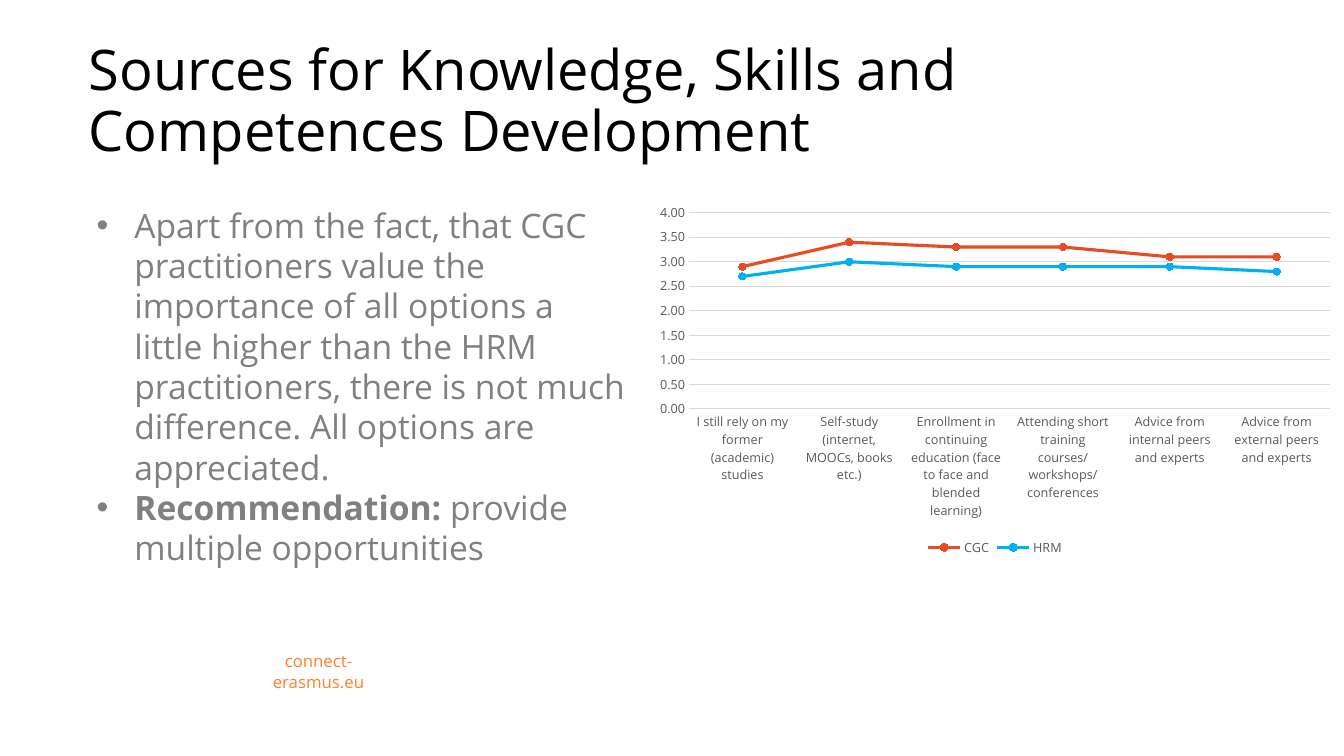
from lxml import etree
from pptx import Presentation
from pptx.chart.data import CategoryChartData
from pptx.dml.color import RGBColor
from pptx.enum.chart import XL_CHART_TYPE, XL_LEGEND_POSITION, XL_MARKER_STYLE, XL_TICK_MARK
from pptx.enum.text import MSO_ANCHOR, PP_ALIGN
from pptx.oxml.ns import qn
from pptx.util import Pt

LINE_CHART = XL_CHART_TYPE.LINE_MARKERS
LEGEND_BOTTOM = XL_LEGEND_POSITION.BOTTOM
CIRCLE = XL_MARKER_STYLE.CIRCLE
NO_TICK = XL_TICK_MARK.NONE
TOP, MIDDLE, BOTTOM = MSO_ANCHOR.TOP, MSO_ANCHOR.MIDDLE, MSO_ANCHOR.BOTTOM
LEFT, CENTER = PP_ALIGN.LEFT, PP_ALIGN.CENTER

BLACK = RGBColor(0x00, 0x00, 0x00)
GRAY = RGBColor(0x80, 0x80, 0x80)
DARK_GRAY = RGBColor(0x59, 0x59, 0x59)
GRID_GRAY = RGBColor(0xD9, 0xD9, 0xD9)
ORANGE = RGBColor(0xFF, 0x7F, 0x2A)
RED = RGBColor(0xE8, 0x4C, 0x22)
BLUE = RGBColor(0x00, 0xB0, 0xF0)

FINDINGS = [
    [("Apart from the fact, that CGC practitioners value the importance of all options "
      "a little higher than the HRM practitioners, there is not much difference. "
      "All options are appreciated.", False)],
    [("Recommendation: ", True), ("provide multiple opportunities", False)],
]
SOURCES = [
    "I still rely on my former (academic) studies",
    "Self-study (internet, MOOCs, books etc.)",
    "Enrollment in continuing education (face to face and blended learning)",
    "Attending short training courses/workshops/conferences",
    "Advice from internal peers and experts",
    "Advice from external peers and experts",
]
RATINGS = [
    ("CGC", (2.9, 3.4, 3.3, 3.3, 3.1, 3.1), RED),
    ("HRM", (2.7, 3.0, 2.9, 2.9, 2.9, 2.8), BLUE),
]


def set_font(font, size, color, bold=False, family="Open Sans"):
    font.name = family
    font.size = Pt(size)
    font.bold = bold
    font.color.rgb = color


def write_paragraph(para, text, *, size, color, align=LEFT, spacing=1.0, bullet_indent=0):
    para.alignment = align
    para.line_spacing = spacing
    if bullet_indent:
        properties = para._p.get_or_add_pPr()
        properties.set("marL", str(Pt(bullet_indent)))
        properties.set("indent", str(-Pt(bullet_indent)))
        etree.SubElement(properties, qn("a:buFont")).set("typeface", "Arial")
        etree.SubElement(properties, qn("a:buChar")).set("char", "•")
    for words, bold in text:
        span = para.add_run()
        span.text = words
        set_font(span.font, size, color, bold)


class SlideBuilder:
    def __init__(self, page):
        self.page = page

    def text(self, paragraphs, left, top, width, height, anchor=TOP, **style):
        box = self.page.shapes.add_textbox(Pt(left), Pt(top), Pt(width), Pt(height))
        frame = box.text_frame
        frame.word_wrap = True
        frame.vertical_anchor = anchor
        for index, text in enumerate(paragraphs):
            para = frame.add_paragraph() if index else frame.paragraphs[0]
            write_paragraph(para, text, **style)

    def line_chart(self, categories, ratings, left, top, width, height):
        data = CategoryChartData(number_format="###0.00")
        data.categories = categories
        for name, values, _ in ratings:
            data.add_series(name, values)
        chart = self.page.shapes.add_chart(
            LINE_CHART, Pt(left), Pt(top), Pt(width), Pt(height), data).chart
        set_font(chart.font, 10, BLACK)
        chart.has_title = False
        chart.has_legend = True
        chart.legend.position = LEGEND_BOTTOM
        chart.legend.include_in_layout = False
        set_font(chart.legend.font, 9, DARK_GRAY)
        self.style_axes(chart.category_axis, chart.value_axis)
        chart.plots[0].vary_by_categories = False
        for series, (_, _, color) in zip(chart.plots[0].series, ratings):
            series.smooth = False
            series.format.line.color.rgb = color
            series.format.line.width = Pt(2.25)
            series.marker.style = CIRCLE
            series.marker.size = 5
            for part in (series.marker.format.fill, series.marker.format.line.fill):
                part.solid()
                part.fore_color.rgb = color

    def style_axes(self, category_axis, value_axis):
        for axis in (category_axis, value_axis):
            axis.major_tick_mark = axis.minor_tick_mark = NO_TICK
            set_font(axis.tick_labels.font, 9, DARK_GRAY)
        value_axis.minimum_scale = 0
        value_axis.maximum_scale = 4
        value_axis.major_unit = 0.5
        value_axis.tick_labels.number_format = "###0.00"
        value_axis.tick_labels.number_format_is_linked = False
        value_axis.format.line.fill.background()
        value_axis.has_major_gridlines = True
        for line in (category_axis.format.line, value_axis.major_gridlines.format.line):
            line.color.rgb = GRID_GRAY
            line.width = Pt(0.75)


def main():
    deck = Presentation()
    deck.slide_width, deck.slide_height = Pt(960), Pt(540)
    builder = SlideBuilder(deck.slides.add_slide(deck.slide_layouts[6]))
    title = [("Sources for Knowledge, Skills and Competences Development", False)]
    builder.text([title], 56.2, 5, 889.2, 115.2, BOTTOM, size=40, color=BLACK, spacing=0.9)
    builder.text(FINDINGS, 61.9, 142.6, 394.6, 320.4, size=24, color=GRAY, bullet_indent=27)
    builder.text([[("connect-erasmus.eu", False)]], 164.2, 468.7, 126.7, 21.6, MIDDLE,
                 size=12, color=ORANGE, align=CENTER)
    builder.line_chart(SOURCES, RATINGS, 461.5, 140.4, 498.5, 259.9)
    deck.save("out.pptx")


if __name__ == "__main__":
    main()
